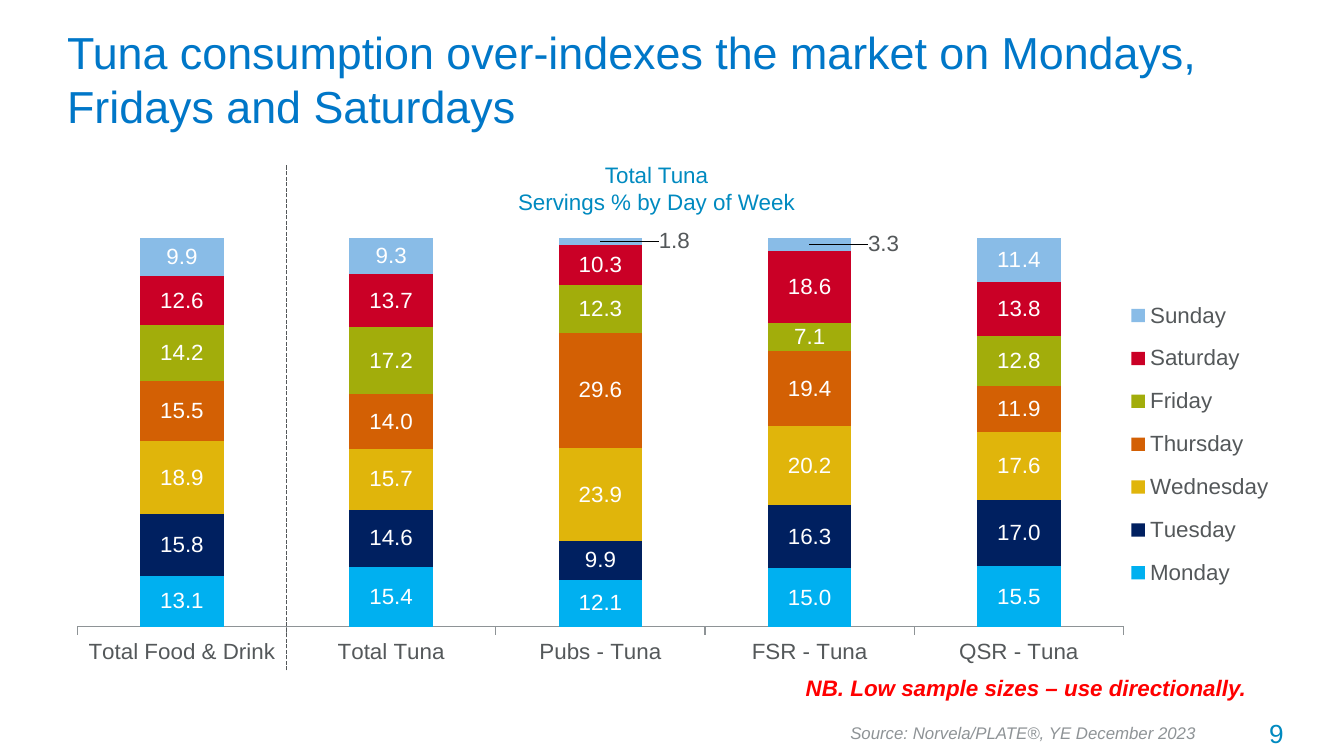
from dataclasses import dataclass
from lxml.etree import SubElement
from pptx import Presentation
from pptx.chart.data import CategoryChartData
from pptx.dml.color import RGBColor
from pptx.enum.chart import XL_CHART_TYPE as ChartType, XL_LEGEND_POSITION as LegendPosition
from pptx.enum.chart import XL_TICK_MARK as TickMark
from pptx.enum.dml import MSO_LINE as LineStyle
from pptx.enum.shapes import MSO_CONNECTOR as Connector
from pptx.enum.text import MSO_ANCHOR as Anchor, PP_ALIGN as Align
from pptx.oxml import parse_xml
from pptx.oxml.ns import nsdecls, qn
from pptx.util import Cm, Pt


@dataclass(frozen=True)
class Theme:
    font: str = "Arial"
    title: str = "0077C8"
    accent: str = "008AC0"
    body: str = "54585A"
    muted: str = "8E9396"
    warning: str = "FF0000"
    white: str = "FFFFFF"
    title_size: int = 24
    page_size: int = 14
    body_size: int = 12
    source_size: int = 9


theme = Theme()


def style_font(font, size, color, bold=False, italic=False):
    font.name = theme.font
    font.size = Pt(size)
    font.bold = bold
    font.italic = italic
    font.color.rgb = RGBColor.from_string(color)


def manual_layout(x, y, size=None):
    settings = {"x": x, "y": y}
    if size:
        settings = {"xMode": "edge", "yMode": "edge", **settings, "w": size[0], "h": size[1]}
    items = "".join(f'<c:{name} val="{value}"/>' for name, value in settings.items())
    return parse_xml(f'<c:layout {nsdecls("c")}><c:manualLayout>{items}</c:manualLayout></c:layout>')


presentation = Presentation()
presentation.slide_width = Cm(25.4)
presentation.slide_height = Cm(14.29)
slide = presentation.slides.add_slide(presentation.slide_layouts[6])

days = [
    ("Monday", "00B0F0", (13.1, 15.4, 12.1, 15.0, 15.5)),
    ("Tuesday", "002060", (15.8, 14.6, 9.9, 16.3, 17.0)),
    ("Wednesday", "E0B50B", (18.9, 15.7, 23.9, 20.2, 17.6)),
    ("Thursday", "D36004", (15.5, 14.0, 29.6, 19.4, 11.9)),
    ("Friday", "A2AD0B", (14.2, 17.2, 12.3, 7.1, 12.8)),
    ("Saturday", "CA0026", (12.6, 13.7, 10.3, 18.6, 13.8)),
    ("Sunday", "89BCE7", (9.9, 9.3, 1.8, 3.3, 11.4)),
]
chart_data = CategoryChartData(number_format="0.0")
chart_data.categories = ["Total Food & Drink", "Total Tuna", "Pubs - Tuna", "FSR - Tuna", "QSR - Tuna"]
for day, color, values in days:
    chart_data.add_series(day, values)
chart = slide.shapes.add_chart(
    ChartType.COLUMN_STACKED_100, Cm(1.02), Cm(4.34), Cm(23.29), Cm(9.04), chart_data
).chart
style_font(chart.font, theme.body_size, theme.body)
chart.has_title = False

plot = chart.plots[0]
plot.gap_width = 150
plot.overlap = 100
plot.vary_by_categories = False
for series, (day, color, values) in zip(plot.series, days):
    series.format.fill.solid()
    series.format.fill.fore_color.rgb = RGBColor.from_string(color)
    labels = series.data_labels
    labels.show_value = True
    labels.number_format = "0.0"
    labels.number_format_is_linked = False
    style_font(labels.font, theme.body_size, theme.white)
    for index, value in enumerate(values):
        if value < 5:
            style_font(series.points[index].data_label.font, theme.body_size, theme.body)
    for label in series._element.iter(qn("c:dLbl")):
        label.insert(1, manual_layout(0.06, 0))

chart.value_axis.visible = False
chart.value_axis.has_major_gridlines = False
chart.value_axis.maximum_scale = 1
category_axis = chart.category_axis
category_axis.major_tick_mark = TickMark.OUTSIDE
category_axis.format.line.color.rgb = RGBColor.from_string(theme.muted)

chart.has_legend = True
legend = chart.legend
legend.position = LegendPosition.RIGHT
legend.include_in_layout = False
for layout in legend._element.findall(qn("c:layout")):
    legend._element.remove(layout)
legend._element.find(qn("c:legendPos")).addnext(manual_layout(0.86, 0.1, (0.14, 0.68)))

plot_area = chart._chartSpace.chart.plotArea
for layout in plot_area.findall(qn("c:layout")):
    plot_area.remove(layout)
plot_layout = manual_layout(0.019, 0.001, (0.849, 0.827))
target = SubElement(plot_layout[0], qn("c:layoutTarget"))
target.set("val", "inner")
plot_layout[0].insert(0, target)
plot_area.insert(0, plot_layout)

divider = slide.shapes.add_connector(Connector.STRAIGHT, Cm(5.41), Cm(12.67), Cm(5.41), Cm(3.12))
divider.line.color.rgb = RGBColor.from_string(theme.body)
divider.line.width = Pt(0.75)
divider.line.dash_style = LineStyle.SQUARE_DOT
SubElement(divider._element.spPr, qn("a:effectLst"))

texts = [
    (["Tuna consumption over-indexes the market on Mondays, Fridays and Saturdays"],
     (1.02, 0.58, 23.29, 1.8), Align.LEFT, True, theme.title_size, theme.title, False, False),
    (["Total Tuna", "Servings % by Day of Week"],
     (9.45, 2.92, 5.92, 1.27), Align.CENTER, False, theme.body_size, theme.accent, False, False),
    (["9"],
     (22.48, 13.44, 2.03, 0.86), Align.RIGHT, True, theme.page_size, theme.accent, False, False),
    (["NB. Low sample sizes – use directionally."],
     (14.48, 12.62, 9.83, 0.76), Align.CENTER, True, theme.body_size, theme.warning, True, True),
    (["Source: Norvela/PLATE®, YE December 2023"],
     (15.82, 13.54, 7.37, 0.64), Align.LEFT, False, theme.source_size, theme.muted, False, True),
]
for lines, box, alignment, wrap, size, color, bold, italic in texts:
    shape = slide.shapes.add_textbox(*map(Cm, box))
    frame = shape.text_frame
    frame.word_wrap = wrap
    frame.vertical_anchor = Anchor.MIDDLE if size == theme.title_size else Anchor.TOP
    for number, line in enumerate(lines):
        paragraph = frame.add_paragraph() if number else frame.paragraphs[0]
        paragraph.alignment = alignment
        run = paragraph.add_run()
        run.text = line
        style_font(run.font, size, color, bold, italic)

presentation.save("out.pptx")
